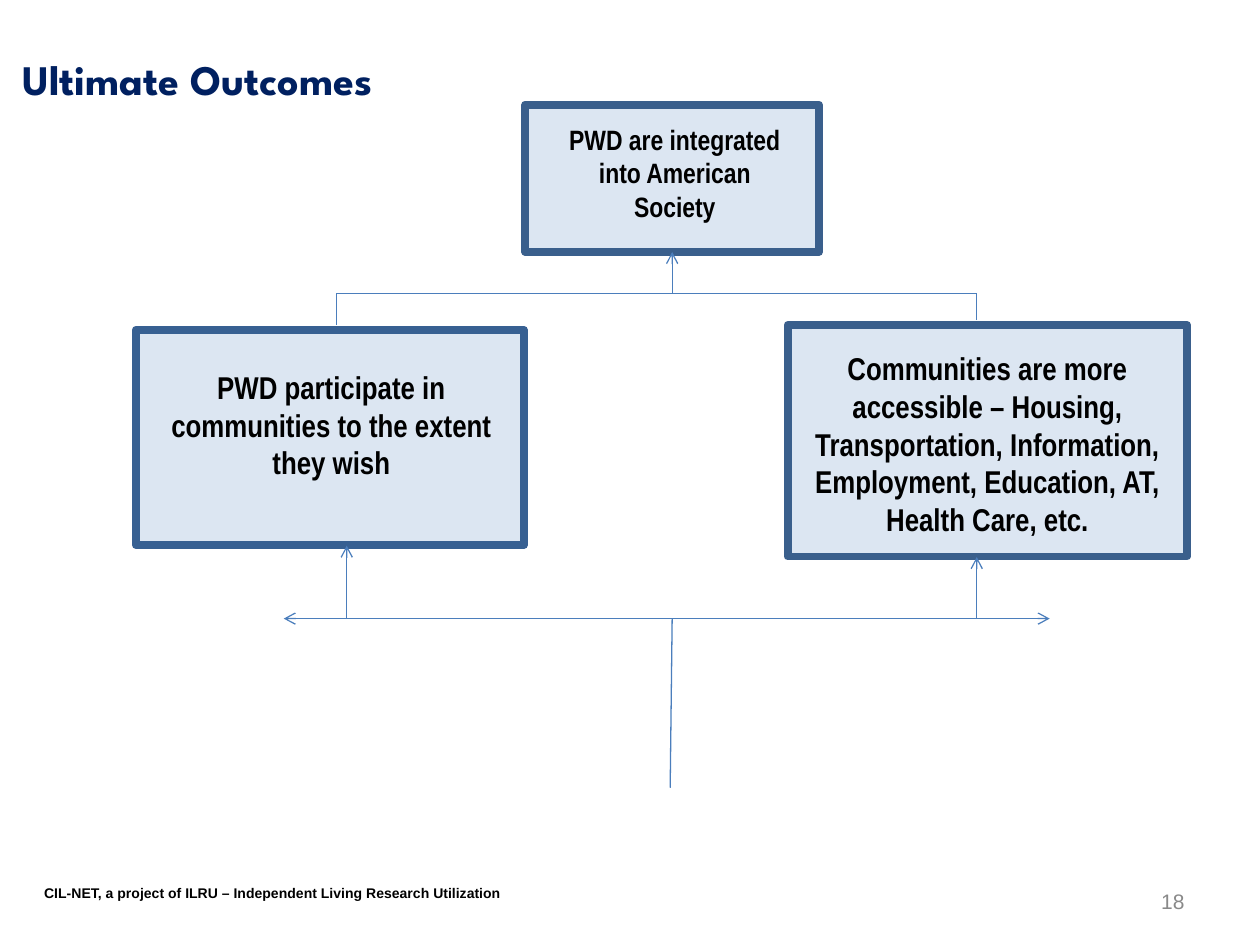
from pptx import Presentation
from pptx.dml.color import RGBColor
from pptx.enum.shapes import MSO_CONNECTOR as Connector, MSO_SHAPE as Shape
from pptx.enum.text import MSO_ANCHOR as Anchor, MSO_AUTO_SIZE as AutoSize, PP_ALIGN as Align
from pptx.oxml.ns import qn
from pptx.util import Cm, Pt
from lxml import etree

NAVY = RGBColor(0x00, 0x20, 0x60)
PALE_BLUE = RGBColor(0xDC, 0xE6, 0xF2)
BORDER_BLUE = RGBColor(0x3A, 0x5F, 0x8C)
LEFT_BORDER_BLUE = RGBColor(0x37, 0x60, 0x92)
LINE_BLUE = RGBColor(0x4B, 0x7E, 0xBC)
BLACK = RGBColor(0x00, 0x00, 0x00)
GREY = RGBColor(0x89, 0x89, 0x89)


def write(box, text, font, size, color, bold=True, align=Align.LEFT, anchor=Anchor.TOP):
    frame = box.text_frame
    frame.text = text
    frame.word_wrap = True
    frame.auto_size = AutoSize.NONE
    frame.vertical_anchor = anchor
    para = frame.paragraphs[0]
    para.alignment = align
    span = para.runs[0]
    span.font.name = font
    span.font.size = Pt(size)
    span.font.bold = bold
    span.font.color.rgb = color


def draw_line(page, start, end, arrows=()):
    line = page.shapes.add_connector(Connector.STRAIGHT, *map(Cm, start + end))
    line.line.color.rgb = LINE_BLUE
    line.line.width = Pt(0.75)
    for arrow in arrows:
        etree.SubElement(line.line._get_or_add_ln(), qn(f"a:{arrow}"), type="arrow")
    etree.SubElement(line._element.spPr, qn("a:effectLst"))
    return line


deck = Presentation()
deck.slide_width, deck.slide_height = Cm(25.4), Cm(19.05)
page = deck.slides.add_slide(deck.slide_layouts[5])

# Title
title = page.shapes.title
title.left, title.top, title.width, title.height = Cm(0.2), Cm(0.64), Cm(10.59), Cm(1.9)
write(title, "Ultimate Outcomes", "League Spartan", 24, NAVY, anchor=Anchor.MIDDLE)

# Outcome boxes: frame, border colour, text area, text size, wording
outcomes = [
    ((10.59, 2.11, 5.92, 2.97), BORDER_BLUE, (11, 2.34, 5.21, 2.31), 16,
     "PWD are integrated into American Society"),
    ((2.74, 6.65, 7.82, 4.34), LEFT_BORDER_BLUE, (2.97, 7.29, 7.42, 2.57), 18,
     "PWD participate in communities to the extent they wish"),
    ((15.88, 6.55, 8.05, 4.67), BORDER_BLUE, (15.88, 6.91, 8.05, 4.11), 18,
     "Communities are more accessible – Housing, Transportation, Information, "
     "Employment, Education, AT, Health Care, etc."),
]
frames = []
for place, border, text_place, size, wording in outcomes:
    frame = page.shapes.add_shape(Shape.RECTANGLE, *map(Cm, place))
    frame.shadow.inherit = False
    frame.fill.solid()
    frame.fill.fore_color.rgb = PALE_BLUE
    frame.line.color.rgb = border
    frame.line.width = Pt(4.5)
    frames.append(frame)
    label = page.shapes.add_textbox(*map(Cm, text_place))
    write(label, wording, "Arial Narrow", size, BLACK, align=Align.CENTER)

# Upper bracket, joining the two lower boxes to the top one
middle, right, upper, lower = 13.55, 19.69, 5.92, 12.47
draw_line(page, (6.78, upper), (right, upper))
draw_line(page, (6.78, upper), (6.78, 6.55))
draw_line(page, (right, upper), (right, 6.45))
rise = draw_line(page, (middle, upper), (middle, 5.08), ["tailEnd"])
rise.end_connect(frames[0], 2)

# Lower branch, leading up to the two lower boxes
draw_line(page, (5.72, lower), (21.16, lower), ["headEnd", "tailEnd"])
draw_line(page, (6.99, lower), (6.99, 11), ["tailEnd"])
draw_line(page, (right, lower), (right, 11.23), ["tailEnd"])
draw_line(page, (13.51, 15.88), (middle, lower))

# Footer and page number
footer = page.shapes.add_textbox(Cm(0.64), Cm(17.7), Cm(12.7), Cm(0.58))
write(footer, "CIL-NET, a project of ILRU – Independent Living Research Utilization",
      "Arial", 8, BLACK)
number = page.shapes.add_textbox(Cm(18.21), Cm(17.65), Cm(5.92), Cm(1.02))
write(number, "18", "Arial", 12, GREY, bold=False, align=Align.RIGHT, anchor=Anchor.MIDDLE)

deck.save("out.pptx")
